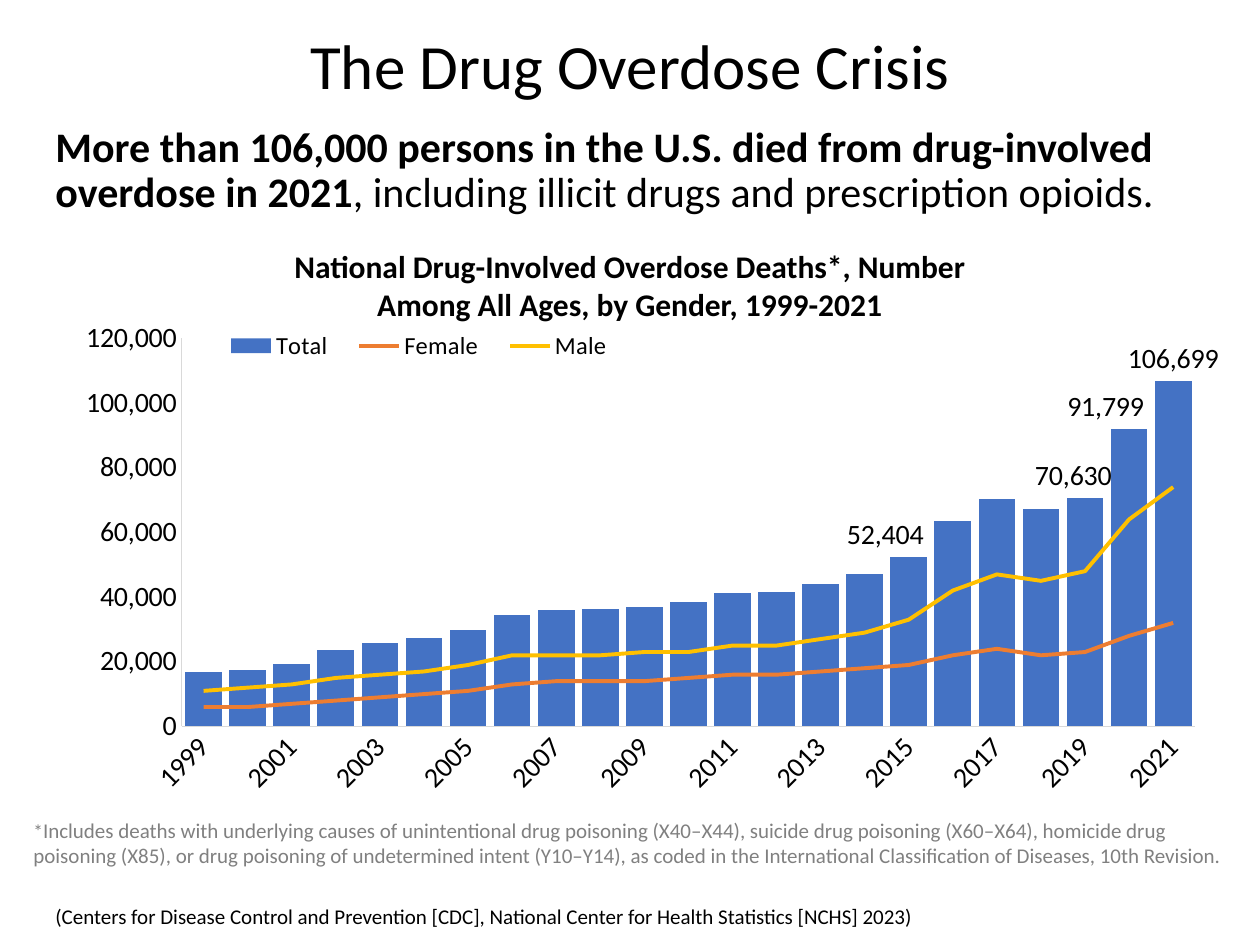
from copy import deepcopy

from lxml import etree
from pptx import Presentation
from pptx import util as u
from pptx.chart.data import CategoryChartData
from pptx.dml.color import RGBColor
from pptx.enum import chart as ch
from pptx.enum import text as tx
from pptx.oxml import parse_xml
from pptx.oxml.ns import qn

PX = 914400 / 126
FONT = "Calibri"
BLACK, GREY, AXIS = "000000", "808080", "D9D9D9"
BLUE, ORANGE, YELLOW = "4472C4", "ED7D31", "FFC000"
C_NS = "http://schemas.openxmlformats.org/drawingml/2006/chart"

TOTAL = [16849, 17415, 19394, 23518, 25785, 27424, 29813, 34425, 36010, 36450, 37004, 38329,
         41340, 41502, 43982, 47055, 52404, 63632, 70237, 67367, 70630, 91799, 106699]
FEMALE = [6000, 6000, 7000, 8000, 9000, 10000, 11000, 13000, 14000, 14000, 14000, 15000,
          16000, 16000, 17000, 18000, 19000, 22000, 24000, 22000, 23000, 28000, 32000]
MALE = [11000, 12000, 13000, 15000, 16000, 17000, 19000, 22000, 22000, 22000, 23000, 23000,
        25000, 25000, 27000, 29000, 33000, 42000, 47000, 45000, 48000, 64000, 74000]
FIRST_YEAR = 1999
LABEL_SHIFTS = {2015: -0.02, 2019: -0.01, 2020: -0.02, 2021: 0}


def emu(box):
    return [round(v * PX) for v in box]


def color(value):
    return RGBColor.from_string(value)


def style(font, size, fill=BLACK, bold=False):
    font.name, font.size, font.bold = FONT, u.Pt(size), bold
    font.color.rgb = color(fill)


def write(frame, runs, size, fill=BLACK, align=tx.PP_ALIGN.LEFT,
          anchor=tx.MSO_ANCHOR.TOP, spacing=1.0, wrap=True):
    frame.word_wrap = wrap
    frame.auto_size = tx.MSO_AUTO_SIZE.NONE
    frame.vertical_anchor = anchor
    paragraph = frame.paragraphs[0]
    paragraph.alignment, paragraph.line_spacing = align, spacing
    for words, changes in runs:
        run = paragraph.add_run()
        run.text = words
        style(run.font, **{"size": size, "fill": fill, **changes})


def add_text(slide, box, runs, **fmt):
    write(slide.shapes.add_textbox(*emu(box)).text_frame, runs, **fmt)


def add_title(slide, box, words):
    title = slide.shapes.title
    title.left, title.top, title.width, title.height = emu(box)
    write(title.text_frame, [(words, {})], size=36, align=tx.PP_ALIGN.CENTER,
          anchor=tx.MSO_ANCHOR.BOTTOM, spacing=0.9)


def set_layout(parent, index, **settings):
    for old in parent.findall(qn("c:layout")):
        parent.remove(old)
    layout = etree.Element(qn("c:layout"))
    manual = etree.SubElement(layout, qn("c:manualLayout"))
    for name, value in settings.items():
        etree.SubElement(manual, qn("c:" + name)).set("val", str(value))
    parent.insert(index, layout)


def move_to_lines(plot_area, bars, series_list):
    lines = parse_xml(f'<c:lineChart xmlns:c="{C_NS}"><c:grouping val="standard"/>'
                      '<c:varyColors val="0"/><c:marker val="1"/></c:lineChart>')
    for series in series_list:
        for flag in series.findall(qn("c:invertIfNegative")):
            series.remove(flag)
        lines.insert(len(lines) - 1, series)
    for axis_id in bars.findall(qn("c:axId")):
        lines.append(deepcopy(axis_id))
    bars.addnext(lines)


def format_axis(axis):
    axis.major_tick_mark = axis.minor_tick_mark = ch.XL_TICK_MARK.NONE
    axis.has_major_gridlines = False
    axis.format.line.color.rgb = color(AXIS)
    axis.format.line.width = u.Pt(0.75)
    style(axis.tick_labels.font, 16)


def label_years(total):
    total.data_labels.show_value = False
    for year, shift in LABEL_SHIFTS.items():
        label = total.points[year - FIRST_YEAR].data_label
        style(label.font, 16)
        label.position = ch.XL_LABEL_POSITION.OUTSIDE_END
    shifts = LABEL_SHIFTS.values()
    for entry, shift in zip(total.data_labels._element.findall(qn("c:dLbl")), shifts):
        set_layout(entry, 1, x=shift, y=0)


def add_deaths_chart(slide, box):
    data = CategoryChartData(number_format="#,##0")
    data.categories = [str(FIRST_YEAR + i) for i in range(len(TOTAL))]
    for name, values in (("Total", TOTAL), ("Female", FEMALE), ("Male", MALE)):
        data.add_series(name, values)
    chart = slide.shapes.add_chart(ch.XL_CHART_TYPE.COLUMN_CLUSTERED, *emu(box), data).chart
    style(chart.font, 16)
    chart.has_title = False

    bars = chart.plots[0]
    bars.gap_width, bars.overlap, bars.vary_by_categories = 20, -2, False
    plot_area = chart._chartSpace.chart.plotArea
    move_to_lines(plot_area, bars._element, [s._element for s in bars.series][1:])
    set_layout(plot_area, 0, layoutTarget="inner", xMode="edge", yMode="edge",
               x=0.118, y=0.167, w=0.863, h=0.68)

    total = bars.series[0]
    total.format.fill.solid()
    total.format.fill.fore_color.rgb = color(BLUE)
    label_years(total)
    for gender, stroke in zip(chart.plots[1].series, (ORANGE, YELLOW)):
        gender.format.line.color.rgb = color(stroke)
        gender.format.line.width = u.Pt(2.25)
        gender.marker.style = ch.XL_MARKER_STYLE.NONE
        gender.smooth = False

    years, deaths = chart.category_axis, chart.value_axis
    format_axis(years)
    format_axis(deaths)
    years._element.find(qn("c:txPr")).find(qn("a:bodyPr")).set("rot", "-2700000")
    skip = etree.Element(qn("c:tickLblSkip"))
    skip.set("val", "2")
    years._element.find(qn("c:noMultiLvlLbl")).addprevious(skip)
    deaths.minimum_scale, deaths.maximum_scale, deaths.major_unit = 0, 120000, 20000
    deaths.tick_labels.number_format = "#,##0"
    deaths.tick_labels.number_format_is_linked = False

    chart.has_legend = True
    chart.legend.position = ch.XL_LEGEND_POSITION.TOP
    chart.legend.include_in_layout = True
    style(chart.legend.font, 14)
    set_layout(chart.legend._element, 1, xMode="edge", yMode="edge",
               x=0.14, y=0.15, w=0.36, h=0.06)


def main():
    deck = Presentation()
    deck.slide_width, deck.slide_height = emu((1260, 945))
    slide = deck.slides.add_slide(deck.slide_layouts[5])
    add_deaths_chart(slide, (43, 243, 1176, 571))
    add_title(slide, (63, 3, 1134, 107), "The Drug Overdose Crisis")
    add_text(slide, (43, 120, 1154, 86), [
        ("More than 106,000 persons in the U.S. died from drug-involved overdose in 2021",
         {"bold": True}),
        (", including illicit drugs and prescription opioids.", {})], size=24, spacing=0.9)
    add_text(slide, (21, 811, 1217, 63), [
        ("*", {"size": 11}),
        ("Includes deaths with underlying causes of unintentional drug poisoning (X40–X44), "
         "suicide drug poisoning (X60–X64), homicide drug poisoning (X85), or drug poisoning "
         "of undetermined intent (Y10–Y14), as coded in the International Classification of "
         "Diseases, 10th Revision.", {})], size=12, fill=GREY)
    add_text(slide, (247, 242, 766, 86), [
        ("National Drug-Involved Overdose Deaths*, Number Among All Ages, by Gender, 1999-2021",
         {"bold": True})], size=18, align=tx.PP_ALIGN.CENTER, anchor=tx.MSO_ANCHOR.MIDDLE)
    add_text(slide, (43, 897, 892, 38), [
        ("(Centers for Disease Control and Prevention [CDC], National Center for Health "
         "Statistics [NCHS] 2023)", {})], size=12, wrap=False)
    deck.save("out.pptx")


if __name__ == "__main__":
    main()
